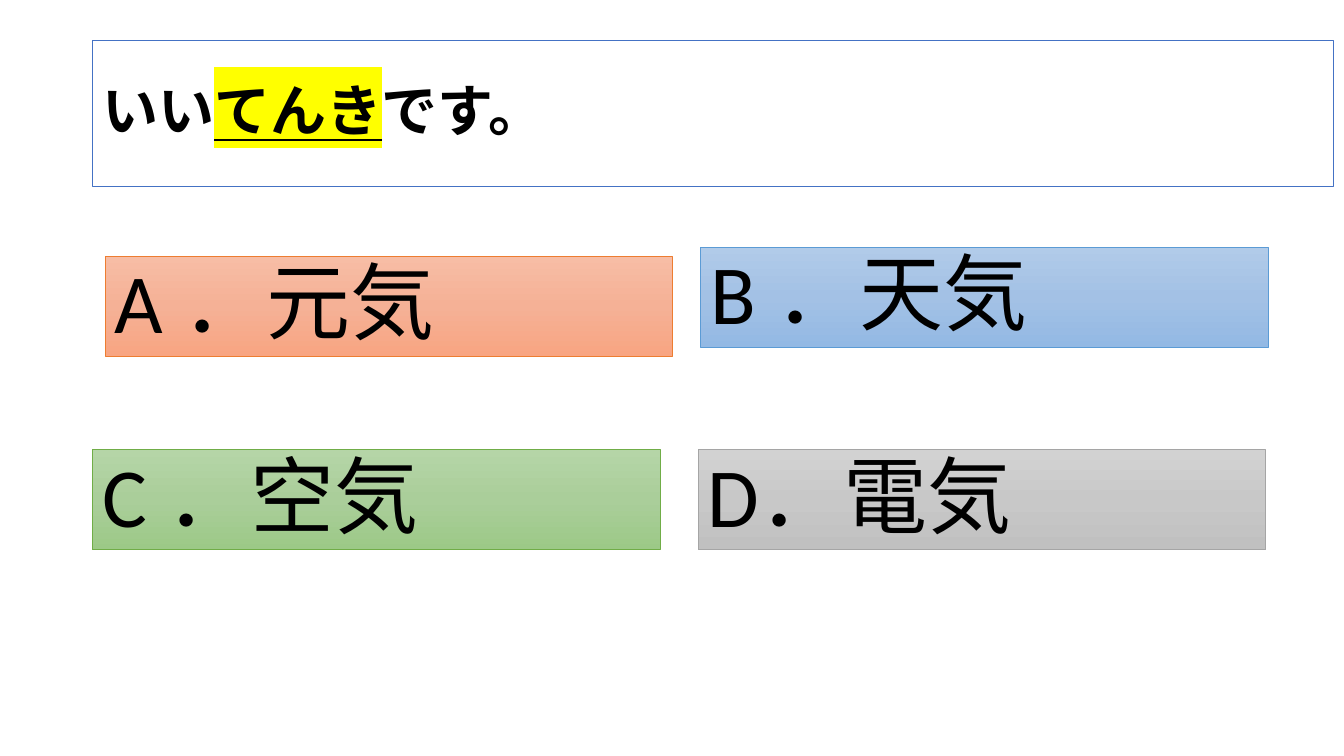
from copy import deepcopy

from lxml import etree
from pptx import Presentation
from pptx.dml.color import RGBColor
from pptx.enum.shapes import MSO_SHAPE
from pptx.enum.text import MSO_ANCHOR, PP_ALIGN
from pptx.oxml.ns import qn
from pptx.util import Pt

RECTANGLE = MSO_SHAPE.RECTANGLE
TOP, MIDDLE = MSO_ANCHOR.TOP, MSO_ANCHOR.MIDDLE
LEFT = PP_ALIGN.LEFT

THEME = {
    "font": "Calibri",
    "text": "000000",
    "highlight": "FFFF00",
    "question_size": 40,
    "answer_size": 60,
    "question": ("FFFFFF", "4472C4"),
    # Gradient from top to bottom, then outline
    "orange": (("F7BDA5", "F5B196", "F8A582"), "ED7D31"),
    "blue": (("B1CBE9", "A3C1E5", "93B9E4"), "5B9BD5"),
    "green": (("B5D5A7", "AACE9A", "9CC987"), "70AD47"),
    "gray": (("D2D2D2", "C8C8C8", "C0C0C0"), "A5A5A5"),
}


def add_box(left, top, width, height, outline, line_width, anchor):
    box = slide.shapes.add_shape(RECTANGLE, Pt(left), Pt(top), Pt(width), Pt(height))
    box.shadow.inherit = False
    box.line.color.rgb = RGBColor.from_string(outline)
    box.line.width = Pt(line_width)
    box.text_frame.word_wrap = True
    box.text_frame.vertical_anchor = anchor
    paragraph = box.text_frame.paragraphs[0]
    paragraph.alignment = LEFT
    paragraph.line_spacing = 0.9
    return box, paragraph


def add_run(paragraph, text, size):
    run = paragraph.add_run()
    run.text = text
    run.font.size = Pt(size)
    run.font.name = THEME["font"]
    run.font.color.rgb = RGBColor.from_string(THEME["text"])
    return run


prs = Presentation()
prs.slide_width, prs.slide_height = Pt(960), Pt(540)
slide = prs.slides.add_slide(prs.slide_layouts[6])

# Question, with the tested word underlined and highlighted
question_fill, question_outline = THEME["question"]
question, sentence = add_box(66, 28.8, 886.5, 104.4, question_outline, 1, MIDDLE)
question.fill.solid()
question.fill.fore_color.rgb = RGBColor.from_string(question_fill)
for part, tested in (("いい", False), ("てんき", True), ("です。", False)):
    run = add_run(sentence, part, THEME["question_size"])
    run.font.bold = True
    if tested:
        run.font.underline = True
        highlight = etree.Element(qn("a:highlight"))
        etree.SubElement(highlight, qn("a:srgbClr"), val=THEME["highlight"])
        run.font._element.find(qn("a:solidFill")).addnext(highlight)

# Four answers
ANSWERS = (
    ("A ．元気", 75, 183.2, "orange"),
    ("B ．天気", 500.5, 176.6, "blue"),
    ("C ．空気", 66, 321.2, "green"),
    ("D．電気", 498.6, 321.2, "gray"),
)
for label, left, top, tone in ANSWERS:
    gradient, outline = THEME[tone]
    answer, choice = add_box(left, top, 405.4, 71.5, outline, 0.5, TOP)
    choice.space_before = Pt(10)
    add_run(choice, label, THEME["answer_size"])

    # Three even stops, running downwards
    answer.fill.gradient()
    answer.fill.gradient_angle = 270
    stop_list = answer._element.spPr.find(qn("a:gradFill")).find(qn("a:gsLst"))
    stop_list.append(deepcopy(stop_list[-1]))
    for index, stop in enumerate(answer.fill.gradient_stops):
        stop.position = index / 2
        stop.color.rgb = RGBColor.from_string(gradient[index])

prs.save("out.pptx")
